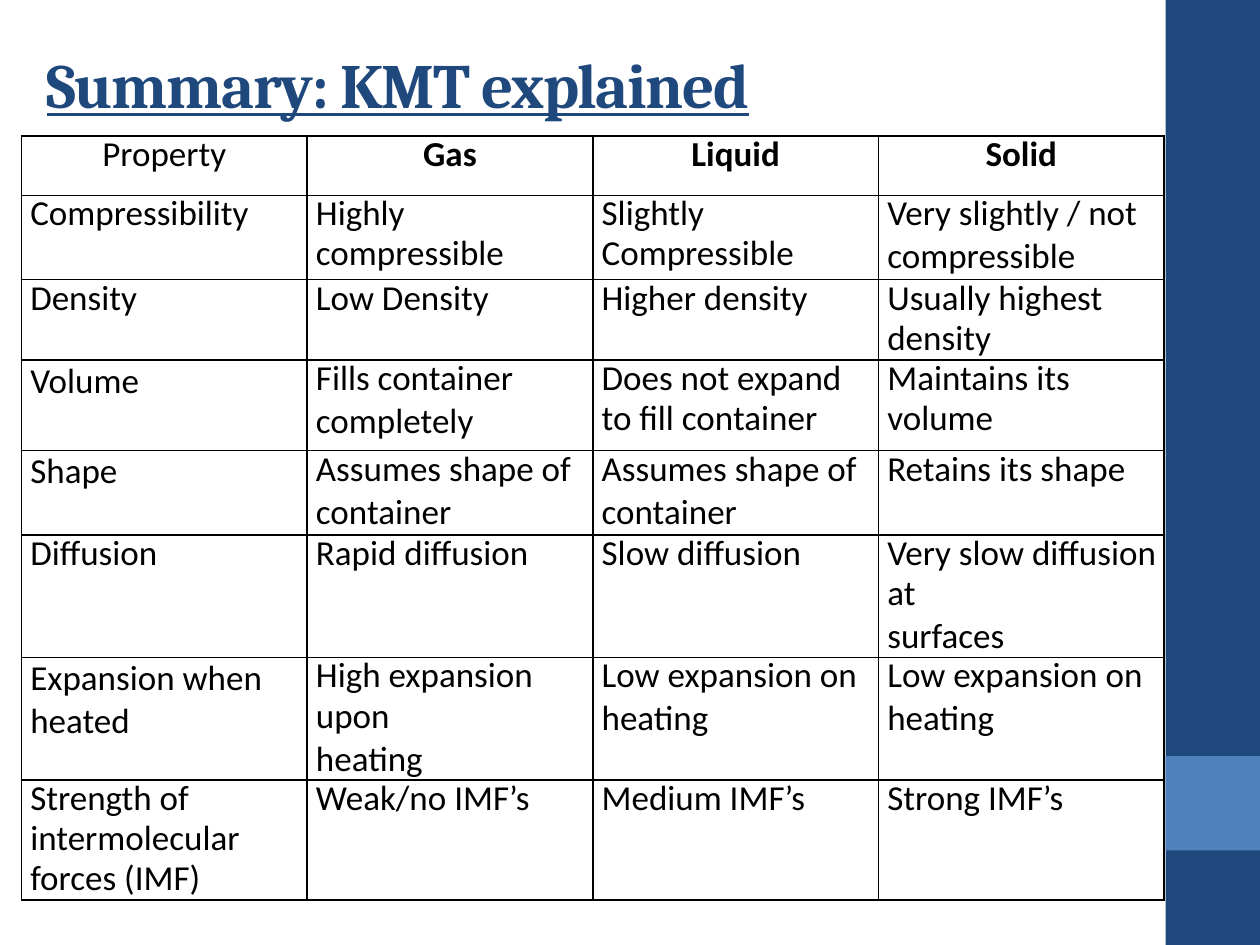
from lxml import etree
from pptx import Presentation
from pptx import util as u
from pptx.dml import color
from pptx.enum import shapes, text
from pptx.oxml import ns

COLORS = {"navy": "1F487C", "blue": "4F81BC", "ink": "000000"}
ROW_HEIGHTS = [4.7, 6.7, 6.3, 7.2, 6.7, 9.7, 9.7, 9.5]
LOOSE_LABELS = {"Volume", "Shape", "Expansion when heated"}
PROPERTIES = [
    ["Property", "Gas", "Liquid", "Solid"],
    ["Compressibility", "Highly compressible", "Slightly Compressible",
     "Very slightly / not\ncompressible"],
    ["Density", "Low Density", "Higher density", "Usually highest density"],
    ["Volume", "Fills container\ncompletely",
     "Does not expand to fill container", "Maintains its volume"],
    ["Shape", "Assumes shape of\ncontainer", "Assumes shape of\ncontainer",
     "Retains its shape"],
    ["Diffusion", "Rapid diffusion", "Slow diffusion",
     "Very slow diffusion at\nsurfaces"],
    ["Expansion when heated", "High expansion upon\nheating",
     "Low expansion on\nheating", "Low expansion on\nheating"],
    ["Strength of intermolecular forces (IMF)", "Weak/no IMF’s",
     "Medium IMF’s", "Strong IMF’s"],
]


class Page:
    """Draw styled elements on a slide divided into 100 columns and 75 rows."""

    def __init__(self, deck):
        self.unit = deck.slide_width / 100
        self.slide = deck.slides.add_slide(deck.slide_layouts[6])

    def size(self, *cells):
        return [u.Emu(round(cell * self.unit)) for cell in cells]

    def style(self, font, name, points, shade, bold=False):
        font.name, font.size, font.bold = name, u.Pt(points), bold
        font.color.rgb = color.RGBColor.from_string(COLORS[shade])

    def bar(self, place, shade):
        bar = self.slide.shapes.add_shape(
            shapes.MSO_SHAPE.RECTANGLE, *self.size(*place))
        bar.shadow.inherit = False
        bar.fill.solid()
        bar.fill.fore_color.rgb = color.RGBColor.from_string(COLORS[shade])
        bar.line.fill.background()

    def title(self, place, words):
        box = self.slide.shapes.add_textbox(*self.size(*place))
        frame = box.text_frame
        frame.word_wrap = True
        frame.auto_size = text.MSO_AUTO_SIZE.SHAPE_TO_FIT_TEXT
        frame.margin_left = frame.margin_right = frame.margin_bottom = 0
        frame.margin_top = u.Inches(0.01)
        frame.text = words
        para = frame.paragraphs[0]
        para._p.get_or_add_pPr().set("marL", str(u.Inches(0.01)))
        span = para.runs[0]
        self.style(span.font, "Cambria", 36, "navy", True)
        span.font.underline = True
        span._r.get_or_add_rPr().set("spc", "-80")

    def borders(self, cell):
        props = cell._tc.get_or_add_tcPr()
        for side in ("a:lnL", "a:lnR", "a:lnT", "a:lnB"):
            line = etree.SubElement(props, ns.qn(side), w=str(u.Pt(1)))
            fill = etree.SubElement(line, ns.qn("a:solidFill"))
            etree.SubElement(fill, ns.qn("a:srgbClr"), val=COLORS["ink"])

    def cell(self, cell, words, heading, label):
        cell.margin_left = cell.margin_right = 0
        cell.margin_top = cell.margin_bottom = 0
        self.borders(cell)
        cell.fill.background()
        cell.text_frame.text = words
        for index, para in enumerate(cell.text_frame.paragraphs):
            if heading:
                para.alignment = text.PP_ALIGN.CENTER
            else:
                para._p.get_or_add_pPr().set("marL", str(u.Inches(0.07)))
            if index:
                para.space_before = u.Pt(0.1)
            elif words not in LOOSE_LABELS:
                para.line_spacing = u.Pt(22.9)
            for span in para.runs:
                self.style(span.font, "Calibri", 20, "ink", heading and not label)

    def table(self, left, top, width, heights, rows):
        place = self.size(left, top, width, sum(heights))
        table = self.slide.shapes.add_table(len(rows), len(rows[0]), *place).table
        table.first_row = table.horz_banding = False
        for row, height in zip(table.rows, heights):
            row.height = self.size(height)[0]
        for r, row in enumerate(rows):
            for c, words in enumerate(row):
                self.cell(table.cell(r, c), words, r == 0, c == 0)


def main():
    deck = Presentation()
    deck.slide_width, deck.slide_height = u.Inches(10), u.Inches(7.5)
    page = Page(deck)
    page.bar((92.5, 0, 7.5, 75), "navy")
    page.bar((92.5, 60, 7.5, 7.5), "blue")
    page.title((3.6, 3.5, 70, 6.3), "Summary: KMT explained")
    page.table(1.7, 10.8, 90.7, ROW_HEIGHTS, PROPERTIES)
    deck.save("out.pptx")


if __name__ == "__main__":
    main()
